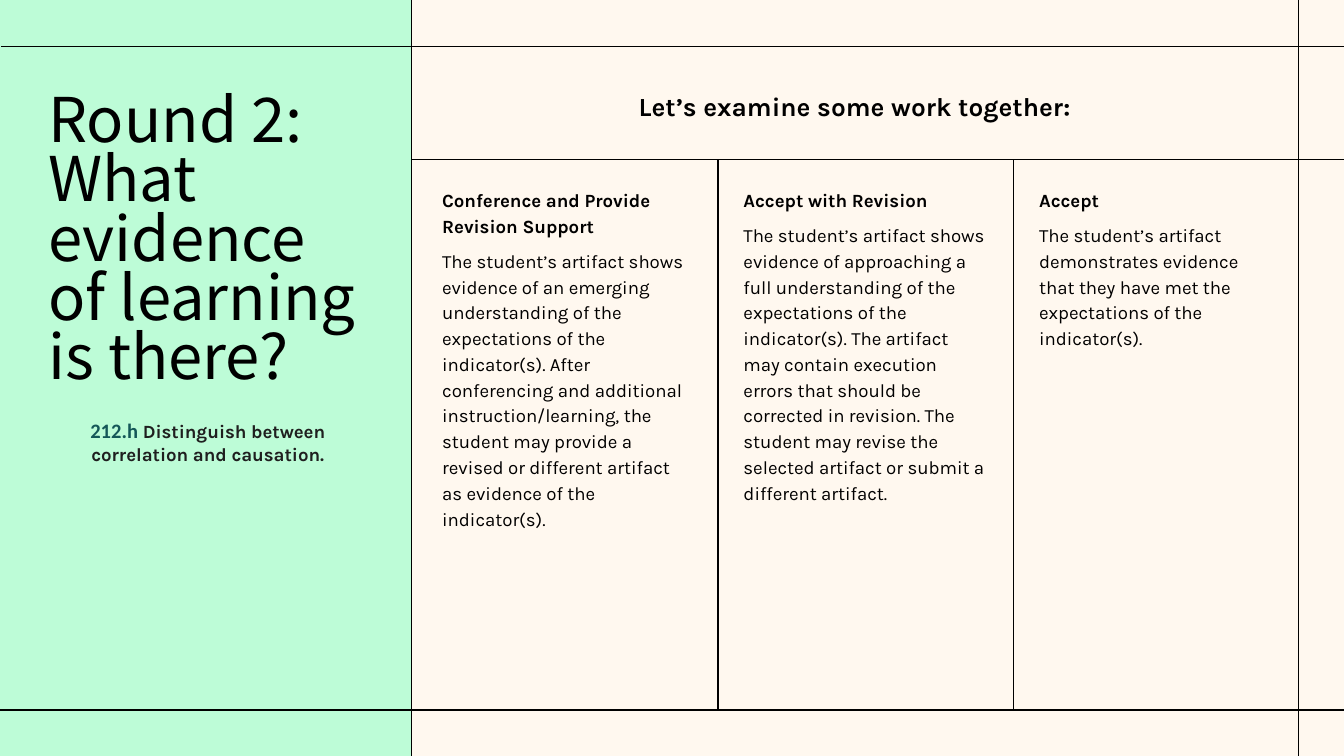
from pptx import Presentation
from pptx.dml.color import RGBColor
from pptx.enum.shapes import MSO_CONNECTOR, MSO_SHAPE
from pptx.enum.text import MSO_ANCHOR, MSO_AUTO_SIZE, PP_ALIGN
from pptx.oxml import parse_xml
from pptx.oxml.ns import nsdecls
from pptx.util import Pt

WIDE, HIGH = 720, 405
EDGE, HEAD, FOOT = 220.3, 85.5, 380.3
SPLITS = [384.6, 543]


def color(code):
    return RGBColor.from_string(code)


def write(shape, box, paras, align=PP_ALIGN.LEFT, lead=1.0, gap=0):
    """Place a text shape; each paragraph is a list of (text, font, size, bold, color)."""
    shape.left, shape.top, shape.width, shape.height = [Pt(v) for v in box]
    frame = shape.text_frame
    frame.word_wrap = True
    frame.auto_size = MSO_AUTO_SIZE.SHAPE_TO_FIT_TEXT
    frame.vertical_anchor = MSO_ANCHOR.TOP
    frame.margin_left = frame.margin_right = frame.margin_top = frame.margin_bottom = 0
    for i, runs in enumerate(paras):
        para = frame.add_paragraph() if i else frame.paragraphs[0]
        para.alignment, para.line_spacing = align, lead
        para.space_before = para.space_after = Pt(gap if i else 0)
        for text, font, size, bold, code in runs:
            for j, part in enumerate(text.split("\n")):
                if j:
                    para.add_line_break()
                run = para.add_run()
                run.text = part
                run.font.name, run.font.size, run.font.bold = font, Pt(size), bold
                run.font.color.rgb = color(code)


deck = Presentation()
deck.slide_width, deck.slide_height = Pt(WIDE), Pt(HIGH)
slide = deck.slides.add_slide(deck.slide_layouts[5])
slide.background.fill.solid()
slide.background.fill.fore_color.rgb = color("FFF8EF")
shapes = slide.shapes
title = shapes.title

# Grid lines: the first two run behind the side panel
lines = [
    (0.7, HEAD, 721.4, HEAD),
    (695.6, -0.7, 695.6, HIGH),
    (-1.4, FOOT, 721.4, FOOT),
    (EDGE, -0.7, EDGE, HIGH),
    (0.7, 25, 721.4, 25),
] + [(x, HEAD, x, FOOT) for x in SPLITS]
for i, ends in enumerate(lines):
    if i == 2:
        # Side panel
        panel = shapes.add_shape(MSO_SHAPE.RECTANGLE, 0, 0, Pt(EDGE), Pt(HIGH))
        panel.shadow.inherit = False
        panel.fill.solid()
        panel.fill.fore_color.rgb = color("BDFCD7")
        panel.line.fill.background()
    line = shapes.add_connector(MSO_CONNECTOR.STRAIGHT, *[Pt(v) for v in ends])
    line.line.color.rgb = color("000000")
    line.line.width = Pt(0.75)
    line.element.spPr.append(parse_xml(f"<a:effectLst {nsdecls('a')}/>"))

# Title, lifted above the panel
panel.element.addnext(title.element)
write(title, (26, 51.1, 170.6, 160),
      [[(text, "Noto Sans CJK KR", 33, False, "000000")]
       for text in ("Round 2:", "What evidence of learning is there?")], lead=0.8)

# Indicator below the title
write(shapes.add_textbox(0, 0, 0, 0), (26, 223.9, 170.6, 25.2),
      [[("212.h ", "Calibri", 11, True, "145758"),
        ("Distinguish between correlation and causation.", "Karla", 10, True, "1F1F1F")]],
      PP_ALIGN.CENTER)

# Heading over the columns
write(shapes.add_textbox(0, 0, 0, 0), (245.5, 48.2, 424.8, 17.3),
      [[("Let’s examine some work together:", "Karla", 14, True, "000000")]],
      PP_ALIGN.CENTER)

# Three outcome columns
columns = [
    (236.9, 184.3, "Conference and Provide Revision Support",
     "The student’s artifact shows evidence of an emerging understanding of the "
     "expectations of the indicator(s). After conferencing and additional "
     "instruction/learning, the student may provide a revised or different artifact "
     "as evidence of the indicator(s)."),
    (SPLITS[0] + 13.7, 170.6, "Accept with Revision",
     "The student’s artifact shows evidence of approaching a full understanding of the "
     "expectations of the indicator(s). The artifact may contain execution errors that "
     "should be corrected in revision. The student may revise the selected artifact or "
     "submit a different artifact."),
    (SPLITS[1] + 13.7, 87.1, "Accept",
     "The student’s artifact demonstrates evidence \nthat they have met the "
     "expectations of the indicator(s)."),
]
for left, tall, name, text in columns:
    write(shapes.add_textbox(0, 0, 0, 0), (left, 99.4, 131, tall),
          [[(name, "Karla", 10, True, "000000")], [(text, "Karla", 10, False, "000000")]],
          lead=1.15, gap=5)

deck.save("out.pptx")
